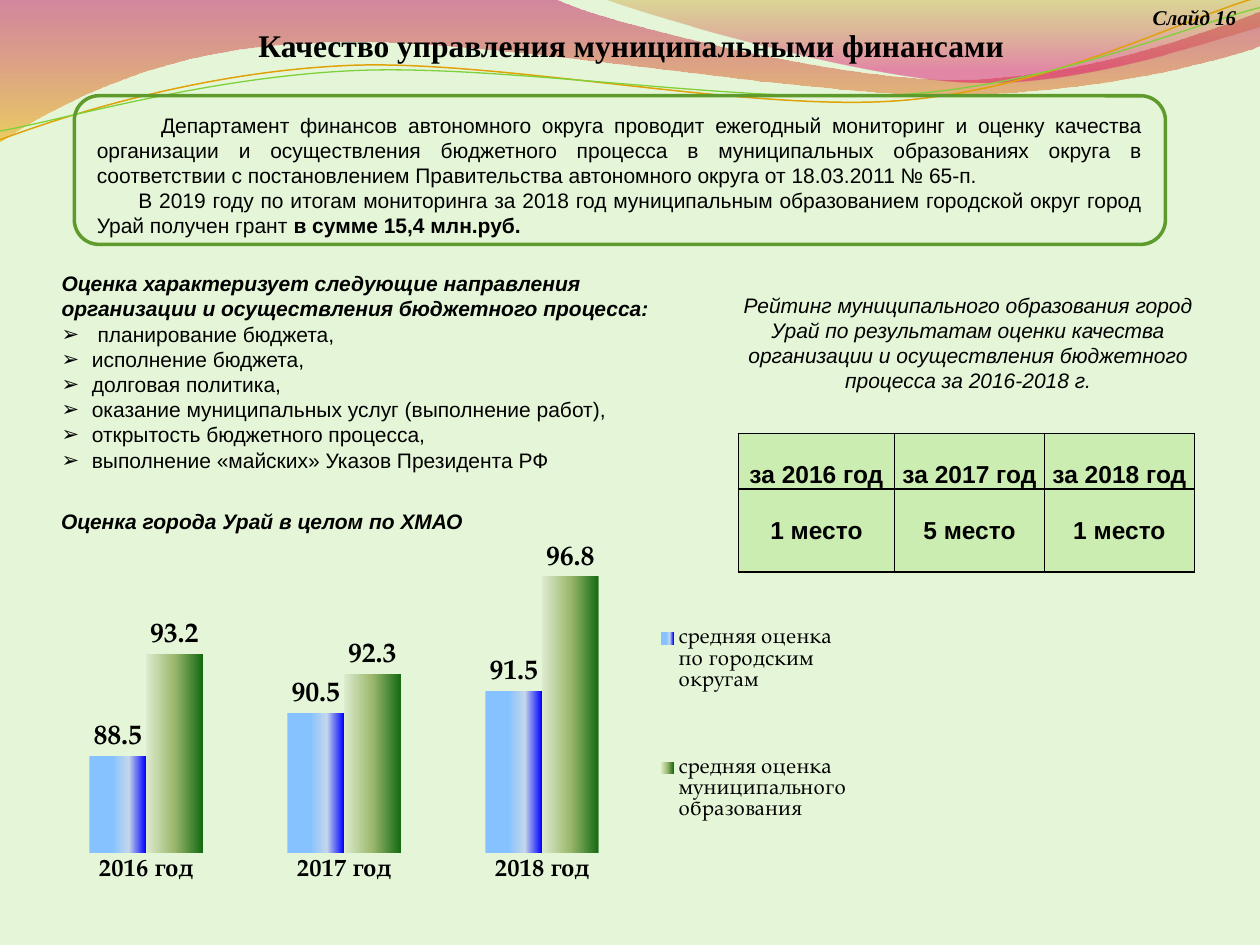
from lxml import etree
from pptx import Presentation
from pptx.chart.data import CategoryChartData
from pptx.dml.color import RGBColor
from pptx.enum.chart import XL_CHART_TYPE, XL_LABEL_POSITION, XL_LEGEND_POSITION, XL_TICK_MARK
from pptx.enum.shapes import MSO_SHAPE
from pptx.enum.text import MSO_ANCHOR, PP_ALIGN
from pptx.oxml import parse_xml
from pptx.oxml.ns import nsdecls, qn
from pptx.util import Inches, Pt

COLS, ROWS = 100, 75  # grid of tenths of an inch


def rgb(value):
    return RGBColor.from_string(value)


def gradient(sp_pr, stops, angle):
    """Swap a solid fill for a gradient; stops are (position %, colour, opacity %)."""
    gs = "".join(
        f'<a:gs pos="{pos * 1000}"><a:srgbClr val="{color}"><a:alpha val="{alpha * 1000}"/></a:srgbClr></a:gs>'
        for pos, color, alpha in stops)
    solid = sp_pr.find(qn("a:solidFill"))
    sp_pr.replace(solid, parse_xml(
        f'<a:gradFill {nsdecls("a")} rotWithShape="1"><a:gsLst>{gs}</a:gsLst>'
        f'<a:lin ang="{angle * 60000}" scaled="0"/></a:gradFill>'))


def manual_layout(parent, before, x, y, w, h, inner=False):
    """Place a chart part by shares of the chart's size."""
    for old in parent.findall(qn("c:layout")):
        parent.remove(old)
    target = '<c:layoutTarget val="inner"/>' if inner else ""
    sizes = "".join(f'<c:{k} val="{v}"/>' for k, v in zip("xywh", (x, y, w, h)))
    layout = parse_xml(
        f'<c:layout {nsdecls("c")}><c:manualLayout>{target}<c:xMode val="edge"/>'
        f'<c:yMode val="edge"/>{sizes}</c:manualLayout></c:layout>')
    parent.find(qn(before)).addprevious(layout)


class Deck:
    font, size, ink = "Arial", 12, "000000"
    cell_fill, frame = "CCEDB1", "5E9B2C"

    def __init__(self):
        self.prs = Presentation()
        self.prs.slide_width, self.prs.slide_height = Inches(10), Inches(7.5)
        self.s = self.prs.slides.add_slide(self.prs.slide_layouts[6])
        fill = self.s.background.fill
        fill.solid()
        fill.fore_color.rgb = rgb("E5F6D8")

    def box(self, x, y, w, h):
        dx, dy = self.prs.slide_width / COLS, self.prs.slide_height / ROWS
        return int(x * dx), int(y * dy), int(w * dx), int(h * dy)

    def style(self, font, size=None, bold=False, italic=False, name=None):
        font.name, font.size = name or self.font, Pt(size or self.size)
        font.bold, font.italic = bold, italic
        font.color.rgb = rgb(self.ink)

    def wave(self, start, *moves, stops=None, line=None, width=1):
        """Moves of two numbers are straight, moves of six are cubic curves."""
        fb = self.s.shapes.build_freeform(Inches(start[0]), Inches(start[1]))
        points = [(Inches(x), Inches(y)) for m in moves for x, y in zip(m[::2], m[1::2])]
        fb.add_line_segments(points, close=bool(stops))
        sp = fb.convert_to_shape()
        # Join each three points of a curve
        segments = iter(list(sp._element.iter(qn("a:lnTo"))))
        for m in moves:
            first = next(segments)
            if len(m) == 6:
                first.tag = qn("a:cubicBezTo")
                for _ in range(2):
                    extra = next(segments)
                    first.append(extra[0])
                    extra.getparent().remove(extra)
        sp.shadow.inherit = False
        if stops:
            sp.fill.solid()
            gradient(sp._element.spPr, stops, 90)
            sp.line.fill.background()
        else:
            sp.fill.background()
            sp.line.color.rgb, sp.line.width = rgb(line), Pt(width)

    def round_frame(self, *at):
        sp = self.s.shapes.add_shape(MSO_SHAPE.ROUNDED_RECTANGLE, *self.box(*at))
        sp.shadow.inherit = False
        sp.fill.background()
        sp.line.color.rgb, sp.line.width = rgb(self.frame), Pt(2)

    def text(self, at, *paras, align=PP_ALIGN.LEFT, wrap=True, **style):
        """Each paragraph is a string or a dict of text, bold tail, indent, bullet and style."""
        tf = self.s.shapes.add_textbox(*self.box(*at)).text_frame
        tf.word_wrap = wrap
        for i, para in enumerate(paras):
            para = para if isinstance(para, dict) else {"text": para}
            p = tf.paragraphs[0] if i == 0 else tf.add_paragraph()
            p.text, p.alignment = para["text"], align
            self.style(p.runs[0].font, **{**style, **para.get("style", {})})
            if "tail" in para:
                r = p.add_run()
                r.text = para["tail"]
                self.style(r.font, bold=True)
            p_pr = p._p.get_or_add_pPr()
            if "indent" in para:
                p_pr.set("indent", str(Inches(para["indent"])))
            if para.get("bullet"):
                p_pr.set("marL", str(Inches(0.24)))
                p_pr.set("indent", str(Inches(-0.24)))
                etree.SubElement(p_pr, qn("a:buFont")).set("typeface", self.font)
                etree.SubElement(p_pr, qn("a:buChar")).set("char", "➢")

    def table(self, at, rows, widths, heights, anchors):
        tb = self.s.shapes.add_table(len(rows), len(widths), *self.box(*at)).table
        for col, w in zip(tb.columns, widths):
            col.width = Inches(w)
        for row, h, values, anchor in zip(tb.rows, heights, rows, anchors):
            row.height = Inches(h)
            for cell, value in zip(row.cells, values):
                cell.text, cell.vertical_anchor = value, anchor
                cell.margin_left = cell.margin_right = cell.margin_top = Inches(0.01)
                cell.margin_bottom = 0
                p = cell.text_frame.paragraphs[0]
                p.alignment = PP_ALIGN.CENTER
                self.style(p.runs[0].font, 14, bold=True)
                tc_pr = cell._tc.get_or_add_tcPr()
                for side in ("lnL", "lnR", "lnT", "lnB"):
                    tc_pr.append(parse_xml(
                        f'<a:{side} {nsdecls("a")} w="12700"><a:solidFill>'
                        f'<a:srgbClr val="{self.ink}"/></a:solidFill></a:{side}>'))
                cell.fill.solid()
                cell.fill.fore_color.rgb = rgb(self.cell_fill)

    def columns(self, at, cats, series, name):
        data = CategoryChartData()
        data.categories = cats
        for title, values, _ in series:
            data.add_series(title, values)
        chart = self.s.shapes.add_chart(
            XL_CHART_TYPE.COLUMN_CLUSTERED, *self.box(*at), data).chart
        chart.has_title = False
        self.style(chart.font, 10, name=name)
        # Axes
        cat, val = chart.category_axis, chart.value_axis
        cat.major_tick_mark = XL_TICK_MARK.NONE
        cat.format.line.fill.background()
        self.style(cat.tick_labels.font, 14, bold=True, name=name)
        val.minimum_scale, val.maximum_scale = 84, 98
        val.has_major_gridlines = val.visible = False
        # Columns and their labels
        plot = chart.plots[0]
        plot.gap_width, plot.overlap, plot.vary_by_categories = 150, 0, False
        for ser, (_, _, stops) in zip(plot.series, series):
            ser.format.fill.solid()
            gradient(ser._element.spPr, stops, 0)
            labels = ser.data_labels
            labels.show_value, labels.position = True, XL_LABEL_POSITION.OUTSIDE_END
            self.style(labels.font, 16, bold=True, name=name)
        # Legend and layout
        chart.has_legend = True
        legend = chart.legend
        legend.position, legend.include_in_layout = XL_LEGEND_POSITION.RIGHT, False
        self.style(legend.font, 12, name=name)
        manual_layout(legend._element, "c:overlay", 0.75, 0.08, 0.23, 0.86)
        manual_layout(chart._chartSpace.chart.plotArea, "c:barChart",
                      0.02, 0.05, 0.71, 0.8, inner=True)


def main():
    d = Deck()
    # Waves along the top
    d.wave((0, 0), (4.4, -0.01), (4.76, 0.17, 6.64, 0.63, 7.58, 0.63),
           (8.53, 0.63, 9.58, 0.26, 10, 0.09), (10.01, 0.36),
           (9.83, 0.44, 8.7, 0.76, 7.46, 0.75), (6.22, 0.75, 3.82, 0.28, 2.57, 0.34),
           (1.29, 0.36, 0.46, 0.83, -0.01, 1.13),
           stops=[(0, "BD0059", 45), (100, "F0AB00", 55)])
    d.wave((4.79, -0.01), (5.09, 0.11, 6.82, 0.62, 7.69, 0.65),
           (8.56, 0.69, 9.61, 0.32, 10, 0.21), (10, 0),
           stops=[(0, "C38B00", 30), (80, "E1006B", 45)])
    d.wave((0, 1.11), (0.48, 0.93, 1.58, 0.57, 2.77, 0.52),
           (3.95, 0.47, 5.93, 0.89, 7.13, 0.8), (8.33, 0.71, 9.38, 0.15, 9.98, -0.02),
           line="E0A209", width=0.85)
    d.wave((0, 1.04), (0.47, 0.96, 1.64, 0.61, 2.83, 0.56),
           (4.03, 0.51, 5.97, 0.84, 7.17, 0.75), (8.36, 0.67, 9.41, 0.21, 10, 0.06),
           line="7FD13B", width=0.75)
    # Title and framed introduction
    d.text((13.5, 1.6, 73.2, 4), "Качество управления муниципальными финансами",
           align=PP_ALIGN.CENTER, size=18, bold=True, name="Times New Roman")
    d.round_frame(5.9, 7.6, 86.6, 11.8)
    d.text((6.7, 8.4, 85, 13.1),
           {"text": "Департамент финансов автономного округа проводит ежегодный мониторинг и оценку качества организации и осуществления бюджетного процесса в муниципальных образованиях округа в соответствии с постановлением Правительства автономного округа от 18.03.2011 № 65-п.", "indent": 0.51},
           {"text": "В 2019 году по итогам мониторинга за 2018 год муниципальным образованием городской округ город Урай получен грант ",
            "tail": "в сумме 15,4 млн.руб.", "indent": 0.33}, align=PP_ALIGN.JUSTIFY)
    # Directions of the assessment
    topics = (" планирование бюджета,", "исполнение бюджета,", "долговая политика,",
              "оказание муниципальных услуг (выполнение работ),", "открытость бюджетного процесса,",
              "выполнение «майских» Указов Президента РФ")
    d.text((3.9, 21, 49.2, 17.2),
           {"text": "Оценка характеризует следующие направления организации и осуществления бюджетного процесса:",
            "style": {"bold": True, "italic": True}},
           *({"text": t, "bullet": True} for t in topics))
    # Rating table
    d.text((57, 22.7, 39.7, 9.1), "Рейтинг муниципального образования город Урай по результатам оценки качества организации и осуществления бюджетного процесса за 2016-2018 г.",
           align=PP_ALIGN.CENTER, italic=True)
    years = [f"{year} год" for year in (2016, 2017, 2018)]
    d.table((58.6, 34.4, 36.2, 11), [[f"за {y}" for y in years], ["1 место", "5 место", "1 место"]],
            (1.24, 1.19, 1.19), (0.44, 0.66), (MSO_ANCHOR.BOTTOM, MSO_ANCHOR.MIDDLE))
    # Scores by year
    d.text((3.5, 39.9, 34.6, 5), "Оценка города Урай в целом по ХМАО",
           align=PP_ALIGN.CENTER, bold=True, italic=True)
    d.columns((2.4, 42.2, 66.4, 30), years, [
        ("средняя оценка по городским округам", (88.5, 90.5, 91.5),
         [(40, "85C2FF", 100), (70, "C4D6EB", 100), (100, "0000FF", 100)]),
        ("средняя оценка муниципального образования", (93.2, 92.3, 96.8),
         [(0, "DDEBCF", 100), (50, "9CB86E", 100), (100, "156B13", 100)]),
    ], "TeX Gyre Pagella")
    # Slide number
    d.text((90.5, -0.1, 8.7, 3), "Слайд 16", wrap=False, bold=True, italic=True,
           name="Times New Roman")
    d.prs.save("out.pptx")


if __name__ == "__main__":
    main()
